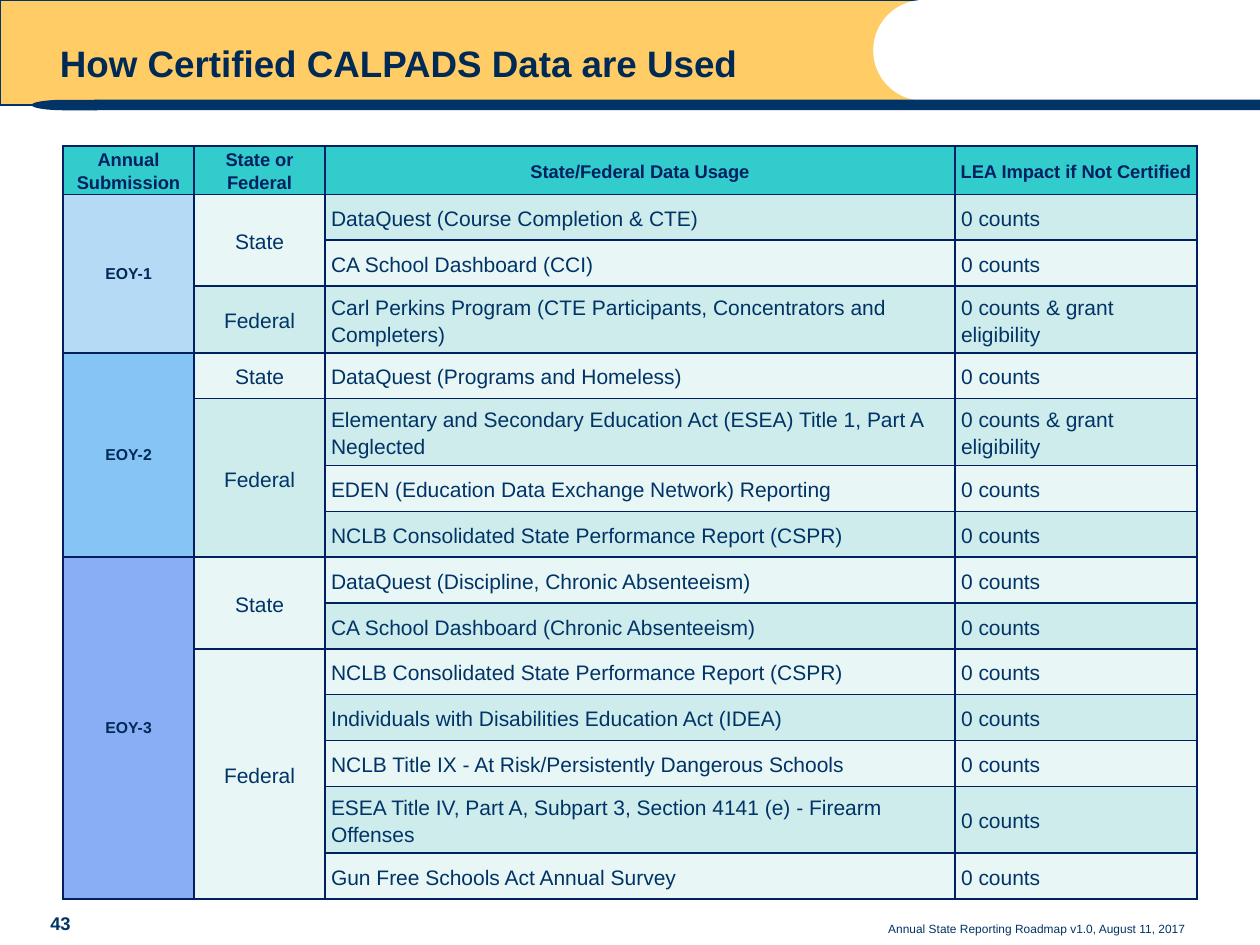
"""Build the slide on how certified CALPADS data are used."""
from typing import NamedTuple

from lxml import etree
from pptx import Presentation
from pptx.dml.color import RGBColor
from pptx.enum.shapes import MSO_SHAPE
from pptx.enum.text import MSO_ANCHOR, PP_ALIGN
from pptx.oxml.ns import qn
from pptx.util import Pt

LEFT, CENTER, RIGHT = PP_ALIGN.LEFT, PP_ALIGN.CENTER, PP_ALIGN.RIGHT
MIDDLE, BOTTOM = MSO_ANCHOR.MIDDLE, MSO_ANCHOR.BOTTOM
RECTANGLE, OVAL = MSO_SHAPE.RECTANGLE, MSO_SHAPE.OVAL
ROUNDED, DELAY = MSO_SHAPE.ROUNDED_RECTANGLE, MSO_SHAPE.FLOWCHART_DELAY

FONT = "Arial"
NAVY, INK, BORDER = "003366", "002A56", "002060"
GOLD, WHITE, TEAL = "FFCC66", "FFFFFF", "33CCCC"
PALE, MINT = "E8F6F6", "CEECEC"
COLUMN_WIDTHS = (74.9, 74.9, 360, 138.2)
HEADER_HEIGHT, SINGLE_HEIGHT, DOUBLE_HEIGHT = 27.7, 26.2, 38.2
HEADERS = ("Annual Submission", "State or Federal",
           "State/Federal Data Usage", "LEA Impact if Not Certified")
ZERO, GRANT = "0 counts", "0 counts & grant eligibility"


class Style(NamedTuple):
    size: float
    color: str
    bold: bool = False
    align: PP_ALIGN = LEFT
    spacing: float = 1.0


class Area(NamedTuple):
    left: float
    top: float
    width: float
    height: float


class Usage(NamedTuple):
    text: str
    impact: str = ZERO
    height: float = SINGLE_HEIGHT


class Level(NamedTuple):
    name: str
    fill: str
    usages: tuple[Usage, ...]


class Submission(NamedTuple):
    name: str
    fill: str
    levels: tuple[Level, ...]


HEADER_STYLE = Style(10.5, BORDER, True, CENTER, 1.15)
SUBMISSION_STYLE = Style(9, INK, True, CENTER)
LEVEL_STYLE = Style(12, NAVY, False, CENTER, 1.15)
BODY_STYLE = Style(12, NAVY, False, LEFT, 1.15)

SUBMISSIONS = (
    Submission("EOY-1", "B4DAF6", (
        Level("State", PALE, (
            Usage("DataQuest (Course Completion & CTE)"),
            Usage("CA School Dashboard (CCI)"))),
        Level("Federal", MINT, (
            Usage("Carl Perkins Program (CTE Participants, Concentrators and Completers)",
                  GRANT, DOUBLE_HEIGHT),)))),
    Submission("EOY-2", "87C4F6", (
        Level("State", PALE, (Usage("DataQuest (Programs and Homeless)"),)),
        Level("Federal", MINT, (
            Usage("Elementary and Secondary Education Act (ESEA) Title 1, Part A Neglected",
                  GRANT, DOUBLE_HEIGHT),
            Usage("EDEN (Education Data Exchange Network) Reporting"),
            Usage("NCLB Consolidated State Performance Report (CSPR)"))))),
    Submission("EOY-3", "8AAEF6", (
        Level("State", PALE, (
            Usage("DataQuest (Discipline, Chronic Absenteeism)"),
            Usage("CA School Dashboard (Chronic Absenteeism)"))),
        Level("Federal", PALE, (
            Usage("NCLB Consolidated State Performance Report (CSPR)"),
            Usage("Individuals with Disabilities Education Act (IDEA)"),
            Usage("NCLB Title IX - At Risk/Persistently Dangerous Schools"),
            Usage("ESEA Title IV, Part A, Subpart 3, Section 4141 (e) - Firearm Offenses",
                  ZERO, DOUBLE_HEIGHT),
            Usage("Gun Free Schools Act Annual Survey"))))),
)


def rgb(value: str) -> RGBColor:
    return RGBColor.from_string(value)


def write(frame, text: str, style: Style) -> None:
    frame.text = text
    para = frame.paragraphs[0]
    para.alignment = style.align
    para.line_spacing = style.spacing
    font = para.runs[0].font
    font.name, font.size, font.bold = FONT, Pt(style.size), style.bold
    font.color.rgb = rgb(style.color)


def add_shape(page, kind: MSO_SHAPE, area: Area, fill: str | None = None,
              line: str | None = None):
    shape = page.shapes.add_shape(kind, *map(Pt, area))
    shape.shadow.inherit = False
    if fill:
        shape.fill.solid()
        shape.fill.fore_color.rgb = rgb(fill)
    else:
        shape.fill.background()
    if line:
        shape.line.color.rgb = rgb(line)
        shape.line.width = Pt(0.75)
    else:
        shape.line.fill.background()
    return shape


def add_label(page, area: Area, text: str, style: Style) -> None:
    frame = page.shapes.add_textbox(*map(Pt, area)).text_frame
    frame.word_wrap = True
    frame.vertical_anchor = BOTTOM
    write(frame, text, style)


def add_banner(page) -> None:
    add_shape(page, RECTANGLE, Area(0, 0, 528, 60), GOLD, NAVY)
    add_shape(page, OVAL, Area(499, 0, 57.6, 57.6), WHITE)
    add_shape(page, RECTANGLE, Area(54, 57, 666, 6), NAVY)
    add_shape(page, DELAY, Area(18, 57, 37.5, 6), NAVY).rotation = 180
    title = add_shape(page, ROUNDED, Area(24, 6, 474, 49.5))
    title.adjustments[0] = 0.22
    title.text_frame.word_wrap = True
    title.text_frame.vertical_anchor = BOTTOM
    write(title.text_frame, "How Certified CALPADS Data are Used",
          Style(21, INK, True, LEFT, 0.9))


def format_cell(cell, fill: str, side: float, end: float) -> None:
    properties = cell._tc.get_or_add_tcPr()
    for edge in ("a:lnL", "a:lnR", "a:lnT", "a:lnB"):
        line = etree.SubElement(properties, qn(edge), w=str(Pt(1)))
        solid = etree.SubElement(line, qn("a:solidFill"))
        etree.SubElement(solid, qn("a:srgbClr"), val=BORDER)
    cell.fill.solid()
    cell.fill.fore_color.rgb = rgb(fill)
    cell.margin_left = cell.margin_right = Pt(side)
    cell.margin_top = cell.margin_bottom = Pt(end)
    cell.vertical_anchor = MIDDLE


def fill_group(table, column: int, first: int, count: int, text: str,
               fill: str, style: Style) -> None:
    for row in range(first, first + count):
        format_cell(table.cell(row, column), fill, 2.2, 0)
    top = table.cell(first, column)
    if count > 1:
        top.merge(table.cell(first + count - 1, column))
    write(top.text_frame, text, style)


def add_usage_table(page) -> None:
    heights = [HEADER_HEIGHT] + [usage.height for submission in SUBMISSIONS
                                 for level in submission.levels for usage in level.usages]
    area = Area(36, 83.4, sum(COLUMN_WIDTHS), sum(heights))
    table = page.shapes.add_table(len(heights), len(HEADERS), *map(Pt, area)).table
    for column, width in zip(table.columns, COLUMN_WIDTHS):
        column.width = Pt(width)
    for row, height in zip(table.rows, heights):
        row.height = Pt(height)
    for column, header in enumerate(HEADERS):
        fill_group(table, column, 0, 1, header, TEAL, HEADER_STYLE)
    row = 1
    for submission in SUBMISSIONS:
        count = sum(len(level.usages) for level in submission.levels)
        fill_group(table, 0, row, count, submission.name, submission.fill, SUBMISSION_STYLE)
        for level in submission.levels:
            fill_group(table, 1, row, len(level.usages), level.name, level.fill, LEVEL_STYLE)
            for usage in level.usages:
                for column, text in enumerate((usage.text, usage.impact), 2):
                    cell = table.cell(row, column)
                    format_cell(cell, MINT if row % 2 else PALE, 3.4, 3.2)
                    write(cell.text_frame, text, BODY_STYLE)
                row += 1


def main() -> None:
    deck = Presentation()
    deck.slide_width, deck.slide_height = Pt(720), Pt(540)
    page = deck.slides.add_slide(deck.slide_layouts[6])
    add_banner(page)
    add_usage_table(page)
    add_label(page, Area(300, 510, 384.5, 28.5),
              "Annual State Reporting Roadmap v1.0, August 11, 2017",
              Style(6.8, NAVY, False, RIGHT))
    add_label(page, Area(11.5, 511, 46, 26.5), "43", Style(10.5, NAVY, True, CENTER))
    deck.save("out.pptx")


if __name__ == "__main__":
    main()
